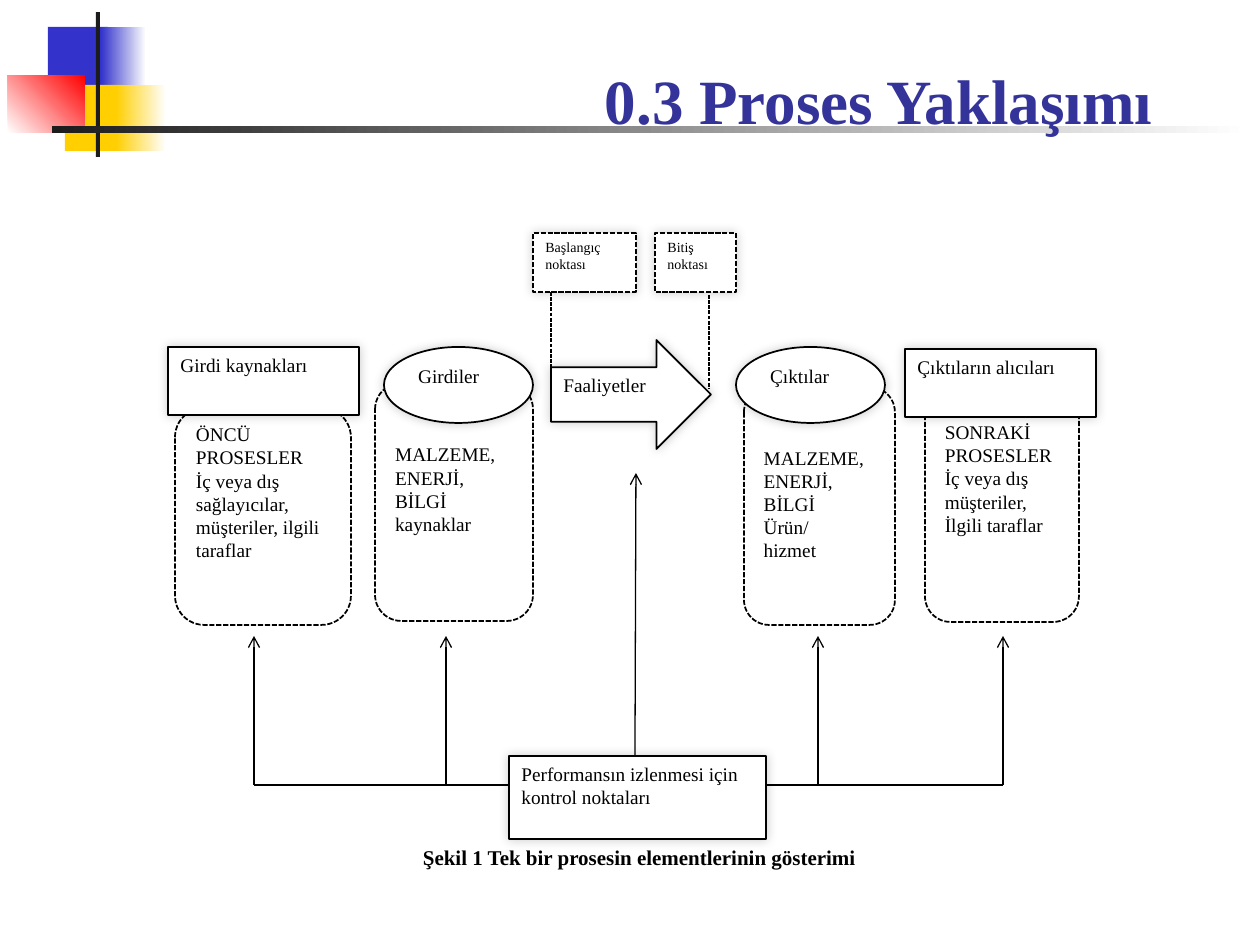
from lxml.etree import SubElement
from pptx import Presentation
from pptx.dml.color import RGBColor
from pptx.enum.dml import MSO_LINE
from pptx.enum.shapes import MSO_CONNECTOR, MSO_SHAPE
from pptx.enum.text import MSO_ANCHOR, PP_ALIGN
from pptx.oxml.ns import qn
from pptx.util import Emu, Pt

EMU_PER_PX = 914400 / 126
FONT = "Times New Roman"
COLORS = {
    "blue": "3333CC",
    "yellow": "FFCF01",
    "red": "FF0000",
    "ink": "1C1C1C",
    "title": "333399",
    "black": "000000",
    "white": "FFFFFF",
}


def px(length):
    """Turn pixels into EMU."""
    return Emu(round(length * EMU_PER_PX))


def color(name):
    """Look up a named colour."""
    return RGBColor.from_string(COLORS[name])


def apply(target, values):
    """Set attributes from a dict of format values."""
    for name, value in values.items():
        setattr(target, name, value)


def place(box, left, top, width, height):
    """Return the EMU frame of a part inside a region box."""
    return [px(n) for n in (box[0] + left, box[1] + top, width, height)]


def write(shape, lines, size, ink="black", align=PP_ALIGN.LEFT, bold=False, **frame):
    """Write one paragraph for each line of text."""
    text_frame = shape.text_frame
    apply(text_frame, {"word_wrap": True, "vertical_anchor": MSO_ANCHOR.TOP, **frame})
    for index, line in enumerate(lines):
        paragraph = text_frame.paragraphs[0] if index == 0 else text_frame.add_paragraph()
        paragraph.alignment = align
        run = paragraph.add_run()
        run.text = line
        apply(run.font, {"name": FONT, "size": Pt(size), "bold": bold})
        run.font.color.rgb = color(ink)


def add_soft_shadow(shape):
    """Give a shape a faint blurred shadow."""
    effects = shape._element.spPr.find(qn("a:effectLst"))
    shadow = SubElement(effects, qn("a:outerShdw"), blurRad=str(Pt(6)), dist="0", dir="18900000")
    tint = SubElement(shadow, qn("a:srgbClr"), val=COLORS["black"])
    SubElement(tint, qn("a:alpha"), val="20000")


def add_node(slide, box, kind, frame, lines, size=11, dashed=False, filled=True, margin_top=6):
    """Add an outlined diagram shape with its text."""
    shape = slide.shapes.add_shape(kind, *place(box, *frame))
    shape.shadow.inherit = False
    if filled:
        shape.fill.solid()
        shape.fill.fore_color.rgb = color("white")
        add_soft_shadow(shape)
    else:
        shape.fill.background()
    shape.line.color.rgb = color("black")
    shape.line.width = Pt(1)
    if dashed:
        shape.line.dash_style = MSO_LINE.SQUARE_DOT
    write(shape, lines, size, margin_top=px(margin_top))


def add_line(slide, box, start, end, dashed=False, arrow=False):
    """Add a thin straight line, dashed or with an arrowhead."""
    points = [px(box[i] + point[i]) for point in (start, end) for i in (0, 1)]
    line = slide.shapes.add_connector(MSO_CONNECTOR.STRAIGHT, *points)
    line.line.color.rgb = color("black")
    line.line.width = Pt(0.75)
    if dashed:
        line.line.dash_style = MSO_LINE.SQUARE_DOT
    if arrow:
        SubElement(line.line._get_or_add_ln(), qn("a:tailEnd"), type="arrow")
    SubElement(line._element.spPr, qn("a:effectLst"))


def draw_ornament(slide, box):
    """Draw the coloured blocks and the two crossing bars."""
    blocks = [
        ((40, 15, 60, 65), ["blue"], 0),
        ((93, 15, 45, 65), ["blue", "white"], 0),
        ((57, 73, 58, 66), ["yellow"], 0),
        ((108, 73, 50, 66), ["yellow", "white"], 0),
        ((0, 63, 77, 58), ["white", "red"], 45),
        ((88, 0, 4, 145), ["ink"], 0),
        ((44, 114, 1198, 7), ["ink", "white"], 0),
    ]
    for frame, names, angle in blocks:
        shape = slide.shapes.add_shape(MSO_SHAPE.RECTANGLE, *place(box, *frame))
        shape.shadow.inherit = False
        shape.line.fill.background()
        if len(names) == 1:
            shape.fill.solid()
            shape.fill.fore_color.rgb = color(names[0])
        else:
            shape.fill.gradient()
            shape.fill.gradient_angle = angle
            for stop, name in zip(shape.fill.gradient_stops, names):
                stop.color.rgb = color(name)


def draw_title(slide, box):
    """Write the slide title."""
    shape = slide.shapes.add_textbox(*place(box, 0, 0, *box[2:]))
    write(shape, ["0.3 Proses Yaklaşımı"], 36, "title", PP_ALIGN.RIGHT, True,
          vertical_anchor=MSO_ANCHOR.BOTTOM, margin_bottom=0)


def draw_stages(slide, box):
    """Draw the process stages with their details and headings."""
    details = [
        ((758, 151, 154, 238), 29, ["SONRAKİ PROSESLER", "İç veya dış müşteriler,", "İlgili taraflar"]),
        ((577, 154, 151, 238), 52, ["MALZEME,", "ENERJİ,", "BİLGİ", "Ürün/", "hizmet"]),
        ((208, 150, 158, 238), 52, ["MALZEME,", "ENERJİ,", "BİLGİ", "kaynaklar"]),
        ((8, 175, 176, 217), 6, ["ÖNCÜ PROSESLER", "İç veya dış sağlayıcılar, müşteriler, ilgili taraflar"]),
    ]
    for frame, margin_top, lines in details:
        add_node(slide, box, MSO_SHAPE.ROUNDED_RECTANGLE, frame, lines,
                 dashed=True, filled=False, margin_top=margin_top)
    headings = [
        (MSO_SHAPE.RECTANGLE, (1, 114, 191, 68), "Girdi kaynakları"),
        (MSO_SHAPE.OVAL, (217, 114, 149, 76), "Girdiler"),
        (MSO_SHAPE.OVAL, (569, 114, 149, 76), "Çıktılar"),
        (MSO_SHAPE.RECTANGLE, (738, 116, 191, 68), "Çıktıların alıcıları"),
    ]
    for kind, frame, text in headings:
        add_node(slide, box, kind, frame, [text])


def draw_activity(slide, box):
    """Draw the activity arrow with its start and end points."""
    limits = [
        ((0, 0, 103, 59), "Başlangıç noktası", (18, 59), (18, 141)),
        ((122, 0, 81, 59), "Bitiş noktası", (176, 62), (176, 156)),
    ]
    for frame, text, start, end in limits:
        add_node(slide, box, MSO_SHAPE.RECTANGLE, frame, [text], size=8, dashed=True)
        add_line(slide, box, start, end, dashed=True)
    add_node(slide, box, MSO_SHAPE.RIGHT_ARROW, (18, 107, 160, 109), ["Faaliyetler"])


def draw_control(slide, box):
    """Draw the control box and its arrows to every stage."""
    add_node(slide, box, MSO_SHAPE.RECTANGLE, (255, 283, 257, 83),
             ["Performansın izlenmesi için kontrol noktaları"])
    for x in (0, 192, 564, 749):
        add_line(slide, box, (x, 312), (x, 163), arrow=True)
    add_line(slide, box, (381, 284), (382, 0), arrow=True)
    for left, right in ((0, 255), (512, 749)):
        add_line(slide, box, (left, 312), (right, 312))


def draw_caption(slide, box):
    """Write the figure caption."""
    shape = slide.shapes.add_textbox(*place(box, 0, 0, *box[2:]))
    write(shape, ["Şekil 1 Tek bir prosesin elementlerinin gösterimi"], 12,
          align=PP_ALIGN.CENTER, bold=True)


def main():
    """Build and save the slide."""
    presentation = Presentation()
    apply(presentation, {"slide_width": px(1260), "slide_height": px(945)})
    slide = presentation.slides.add_slide(presentation.slide_layouts[6])
    draw_ornament(slide, (8, 12, 1242, 145))
    draw_title(slide, (167, 53, 998, 84))
    draw_stages(slide, (167, 233, 929, 392))
    draw_activity(slide, (533, 233, 203, 216))
    draw_control(slide, (254, 473, 749, 366))
    draw_caption(slide, (94, 838, 1091, 39))
    presentation.save("out.pptx")


if __name__ == "__main__":
    main()
